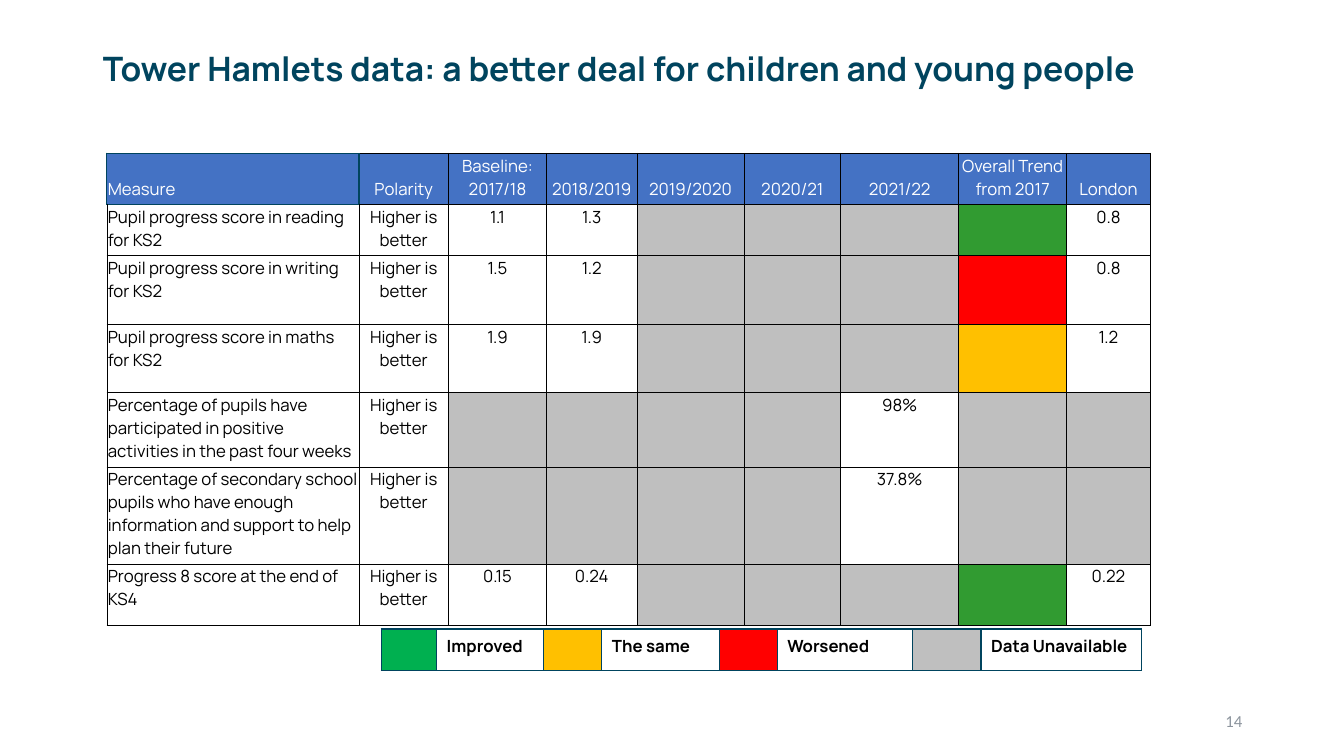
from lxml import etree
from pptx import Presentation
from pptx.dml.color import RGBColor
from pptx.enum.text import MSO_ANCHOR, PP_ALIGN
from pptx.oxml.ns import qn
from pptx.util import Inches, Pt

LEFT, CENTER, RIGHT = PP_ALIGN.LEFT, PP_ALIGN.CENTER, PP_ALIGN.RIGHT
TOP, MIDDLE, BOTTOM = MSO_ANCHOR.TOP, MSO_ANCHOR.MIDDLE, MSO_ANCHOR.BOTTOM

# Content: in the grid, a key of COLORS stands for an empty cell of that colour
TITLE = "Tower Hamlets data: a better deal for children and young people"
PAGE_NUMBER = "14"
HEADERS = ["Measure", "Polarity", "Baseline: 2017/18", "2018/2019", "2019/2020",
           "2020/21", "2021/22", "Overall Trend from 2017", "London"]
POLARITY = "Higher is better"
NO_DATA = "unavailable"
GAP = [NO_DATA] * 3
SURVEY_GAP = [NO_DATA] * 4
MEASURES = [
    ["Pupil progress score in reading for KS2", POLARITY, "1.1", "1.3", *GAP, "up", "0.8"],
    ["Pupil progress score in writing for KS2", POLARITY, "1.5", "1.2", *GAP, "worse", "0.8"],
    ["Pupil progress score in maths for KS2", POLARITY, "1.9", "1.9", *GAP, "same", "1.2"],
    ["Percentage of pupils have participated in positive activities in the past four weeks",
     POLARITY, *SURVEY_GAP, "98%", NO_DATA, NO_DATA],
    ["Percentage of secondary school pupils who have enough information and support "
     "to help plan their future", POLARITY, *SURVEY_GAP, "37.8%", NO_DATA, NO_DATA],
    ["Progress 8 score at the end of KS4", POLARITY, "0.15", "0.24", *GAP, "up", "0.22"],
]
TREND_KEY = ["improved", "Improved", "same", "The same", "worse", "Worsened"]
MISSING_KEY = [NO_DATA, "Data Unavailable"]

COLORS = {
    "navy": "00445E", "header": "4472C4", "white": "FFFFFF", "black": "000000",
    "number": "8C949D", "up": "319B31", "worse": "FF0000", "same": "FFC000",
    "improved": "00B050", NO_DATA: "BFBFBF",
}

# Layout in inches
COLUMNS = [2.5, 0.89, 0.97, 0.9, 1.06, 0.96, 1.17, 1.07, 0.83]
ROWS = [0.5, 0.51, 0.68, 0.68, 0.73, 0.96, 0.61]
TREND_COLUMNS = [0.55, 1.06, 0.58, 1.17, 0.57, 1.34]
MISSING_COLUMNS = [0.68, 1.59]
KEY_LEFT, KEY_TOP, KEY_HEIGHT = 3.78, 6.24, 0.41
DATA_INSETS = (0.01, 0.01, 0.01, 0.04)
KEY_INSETS = (0.1, 0.05, 0.1, 0.05)


def rgb(name):
    return RGBColor.from_string(COLORS[name])


def write(frame, text, size=12, color="black", font="Manrope", bold=False, align=LEFT):
    paragraph = frame.paragraphs[0]
    paragraph.text = text
    paragraph.alignment = align
    paragraph.font.size = Pt(size)
    run_font = paragraph.runs[0].font if paragraph.runs else paragraph.font
    run_font.name = font
    run_font.size = Pt(size)
    run_font.bold = bold
    run_font.color.rgb = rgb(color)
    return paragraph


def set_border(cell, side, color, width):
    properties = cell._tc.get_or_add_tcPr()
    line = etree.SubElement(properties, qn(f"a:ln{side}"), w=str(Pt(width)))
    fill = etree.SubElement(line, qn("a:solidFill"))
    etree.SubElement(fill, qn("a:srgbClr"), val=COLORS[color])


def add_grid(slide, left, top, columns, rows, insets, border):
    """Add a plain table; border(row, column, side) gives colour and width."""
    table = slide.shapes.add_table(
        len(rows), len(columns), Inches(left), Inches(top),
        Inches(sum(columns)), Inches(sum(rows))).table
    table.first_row = table.horz_banding = False
    for column, width in zip(table.columns, columns):
        column.width = Inches(width)
    for row, height in zip(table.rows, rows):
        row.height = Inches(height)
    for r in range(len(rows)):
        for c in range(len(columns)):
            cell = table.cell(r, c)
            (cell.margin_left, cell.margin_top,
             cell.margin_right, cell.margin_bottom) = map(Inches, insets)
            for side in "LRTB":
                set_border(cell, side, *border(r, c, side))
    return table


def fill_cell(cell, value, fill="white", anchor=TOP, **text_format):
    empty = value in COLORS
    cell.fill.solid()
    cell.fill.fore_color.rgb = rgb(value if empty else fill)
    cell.vertical_anchor = anchor
    write(cell.text_frame, "" if empty else value, **text_format)


def data_border(row, column, side):
    around_measure = ((row, column) == (0, 0) or (row, column, side) == (0, 1, "L")
                      or (row, column, side) == (1, 0, "T"))
    return ("navy", 1) if around_measure else ("black", 0.5)


def add_data_table(slide):
    table = add_grid(slide, 1.06, 1.52, COLUMNS, ROWS, DATA_INSETS, data_border)
    for r, values in enumerate([HEADERS, *MEASURES]):
        look = {"fill": "header", "color": "white", "anchor": BOTTOM} if r == 0 else {}
        for c, value in enumerate(values):
            fill_cell(table.cell(r, c), value, align=CENTER if c else LEFT, **look)


def add_key(slide, left, columns, values):
    table = add_grid(slide, left, KEY_TOP, columns, [KEY_HEIGHT], KEY_INSETS,
                     lambda row, column, side: ("navy", 1))
    for c, value in enumerate(values):
        fill_cell(table.cell(0, c), value, bold=True)


def main():
    presentation = Presentation()
    presentation.slide_width, presentation.slide_height = Inches(13.33), Inches(7.5)
    slide = presentation.slides.add_slide(presentation.slide_layouts[5])

    # Title
    title = slide.shapes.title
    title.left, title.top, title.width, title.height = map(Inches, (0.92, 0.4, 11.5, 1))
    title.text_frame.vertical_anchor = TOP
    title.text_frame.margin_top = Inches(0.12)
    heading = write(title.text_frame, TITLE, size=24, color="navy", bold=True)
    heading.line_spacing = 0.9

    # Data table and its colour key
    add_data_table(slide)
    add_key(slide, KEY_LEFT, TREND_COLUMNS, TREND_KEY)
    add_key(slide, KEY_LEFT + sum(TREND_COLUMNS), MISSING_COLUMNS, MISSING_KEY)

    # Page number
    number = slide.shapes.add_textbox(*map(Inches, (9.42, 6.95, 3, 0.4))).text_frame
    number.word_wrap = True
    number.vertical_anchor = MIDDLE
    write(number, PAGE_NUMBER, color="number", font="Calibri", align=RIGHT)

    presentation.save("out.pptx")


if __name__ == "__main__":
    main()
